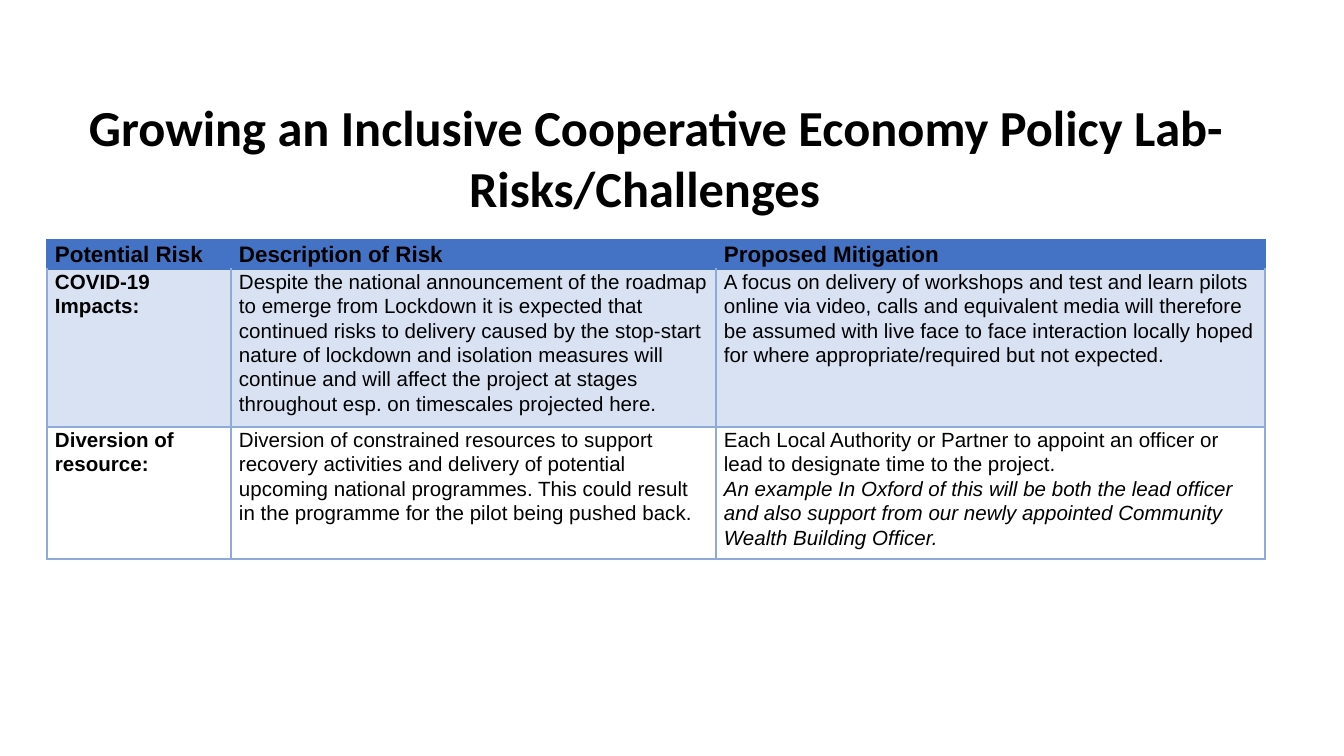
from lxml.etree import SubElement
from pptx import Presentation
from pptx.dml.color import RGBColor
from pptx.enum.text import PP_ALIGN
from pptx.oxml.ns import qn
from pptx.util import Pt

PX = 914400 / 134.4
COLORS = {"text": "000000", "header": "4472C4", "band": "D9E2F3", "grid": "8EAADB"}
COLUMN_WIDTHS = [184, 485, 549]
ROW_HEIGHTS = [29, 158, 132]
TITLE_LINES = ["Growing an Inclusive Cooperative Economy Policy Lab-", "Risks/Challenges  "]
# Each cell is a list of paragraphs.
RISK_ROWS = [
    [["Potential Risk"], ["Description of Risk"], ["Proposed Mitigation"]],
    [
        ["COVID-19 Impacts:"],
        ["Despite the national announcement of the roadmap to emerge from Lockdown it is "
         "expected that continued risks to delivery caused by the stop-start nature of "
         "lockdown and isolation measures will continue and will affect the project at "
         "stages throughout esp. on timescales projected here."],
        ["A focus on delivery of workshops and test and learn pilots online via video, calls "
         "and equivalent media will therefore be assumed with live face to face interaction "
         "locally hoped for where appropriate/required but not expected."],
    ],
    [
        ["Diversion of resource:"],
        ["Diversion of constrained resources to support recovery activities and delivery of "
         "potential upcoming national programmes. This could result in the programme for "
         "the pilot being pushed back."],
        ["Each Local Authority or Partner to appoint an officer or lead to designate time "
         "to the project.",
         "An example In Oxford of this will be both the lead officer and also support from "
         "our newly appointed Community Wealth Building Officer."],
    ],
]


def px(length):
    return round(length * PX)


def add_run(paragraph, text, font_name, size, bold, italic=False):
    run = paragraph.add_run()
    run.text = text
    run.font.name = font_name
    run.font.size = Pt(size)
    run.font.bold = bold
    run.font.italic = italic
    run.font.color.rgb = RGBColor.from_string(COLORS["text"])


presentation = Presentation()
presentation.slide_width = px(1344)
presentation.slide_height = px(756)
slide = presentation.slides.add_slide(presentation.slide_layouts[6])

# Title
title = slide.shapes.add_textbox(px(47), px(90), px(1218), px(136))
title.text_frame.word_wrap = True
for index, line in enumerate(TITLE_LINES):
    paragraph = title.text_frame.paragraphs[0] if index == 0 else title.text_frame.add_paragraph()
    paragraph.alignment = PP_ALIGN.CENTER
    add_run(paragraph, line, "Calibri", 27, True)

# Risk table
table = slide.shapes.add_table(
    len(ROW_HEIGHTS), len(COLUMN_WIDTHS),
    px(47), px(240), px(sum(COLUMN_WIDTHS)), px(sum(ROW_HEIGHTS)),
).table
table.first_row = False
table.horz_banding = False
for column, width in zip(table.columns, COLUMN_WIDTHS):
    column.width = px(width)
for row, height in zip(table.rows, ROW_HEIGHTS):
    row.height = px(height)

for row_index, row_texts in enumerate(RISK_ROWS):
    is_header = row_index == 0
    for column_index, texts in enumerate(row_texts):
        cell = table.cell(row_index, column_index)
        cell.margin_left = cell.margin_right = px(8)
        cell.margin_top = cell.margin_bottom = 0
        for index, text in enumerate(texts):
            frame = cell.text_frame
            paragraph = frame.paragraphs[0] if index == 0 else frame.add_paragraph()
            paragraph.line_spacing = 1.07
            if column_index == 1 and not is_header:
                paragraph.space_after = Pt(14.5)
            add_run(paragraph, text, "Arial", 12 if is_header else 11,
                    bold=is_header or column_index == 0, italic=index == 1)

        # Borders come before the fill in the cell properties.
        properties = cell._tc.get_or_add_tcPr()
        for side in ("lnL", "lnR", "lnT", "lnB"):
            under_header = row_index == 1 and side == "lnT"
            color = COLORS["header" if is_header or under_header else "grid"]
            border = SubElement(properties, qn(f"a:{side}"), w=str(Pt(1)))
            fill = SubElement(border, qn("a:solidFill"))
            SubElement(fill, qn("a:srgbClr"), val=color)
        if row_index == 2:
            cell.fill.background()
        else:
            cell.fill.solid()
            cell.fill.fore_color.rgb = RGBColor.from_string(COLORS["header" if is_header else "band"])

presentation.save("out.pptx")
